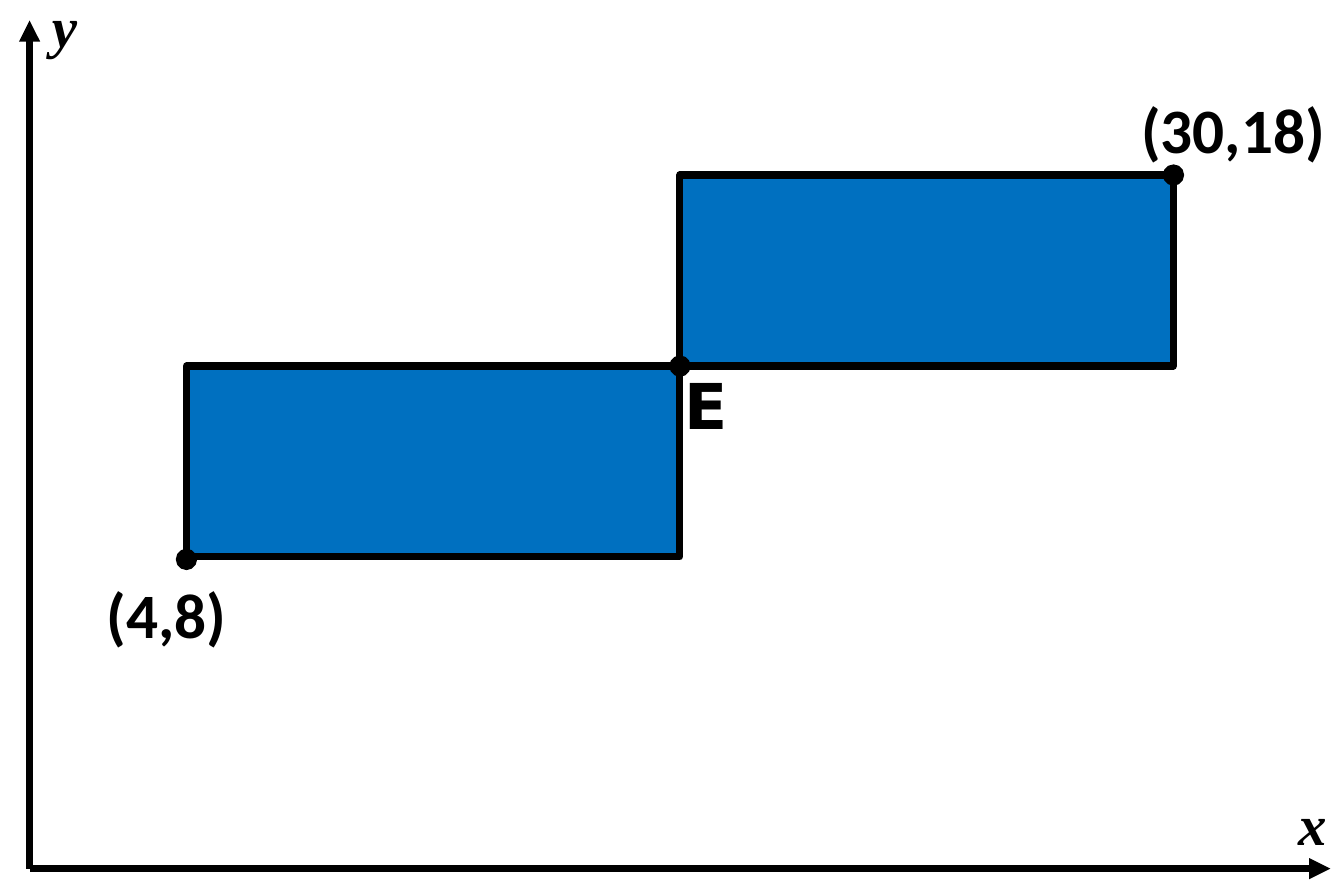
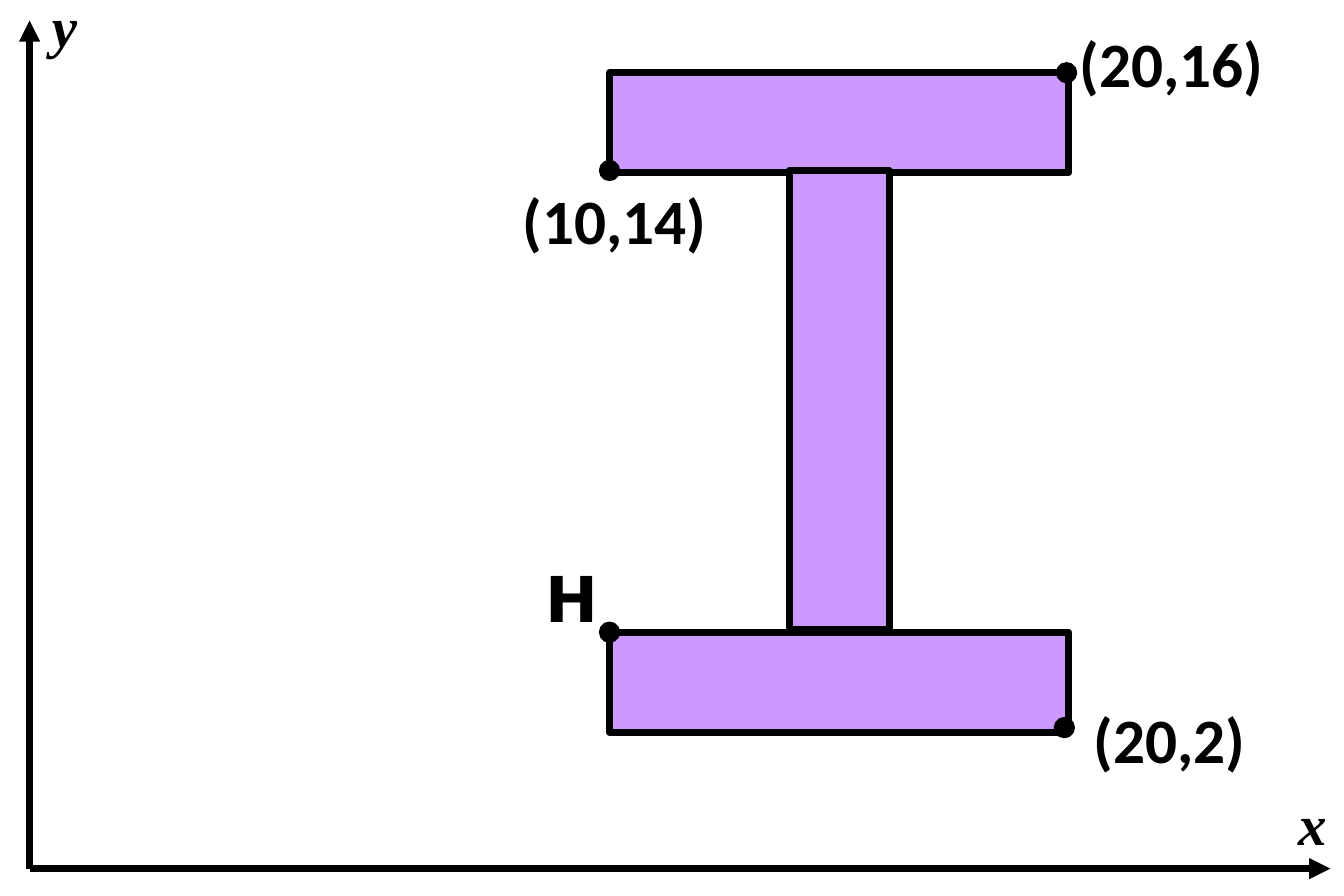
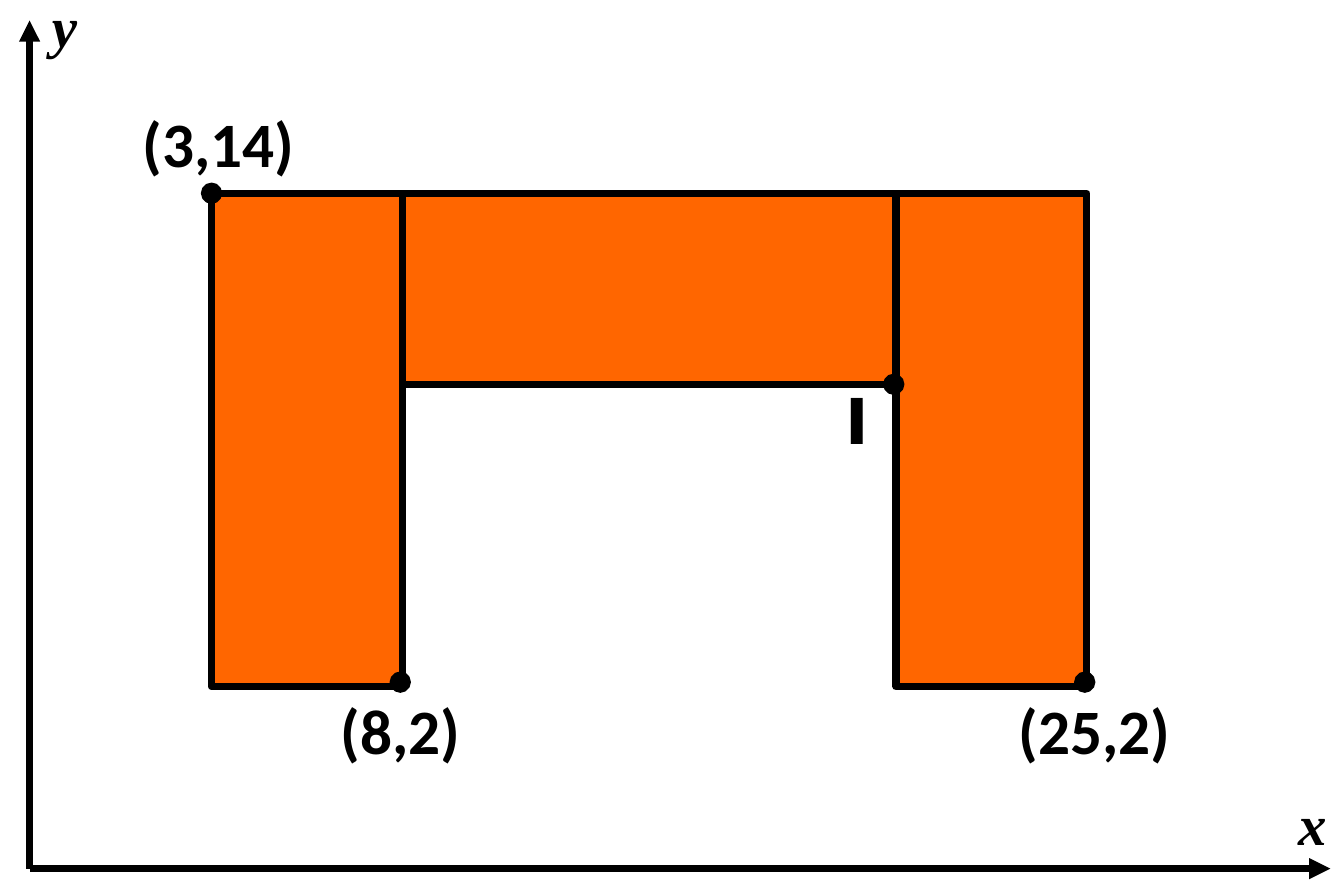
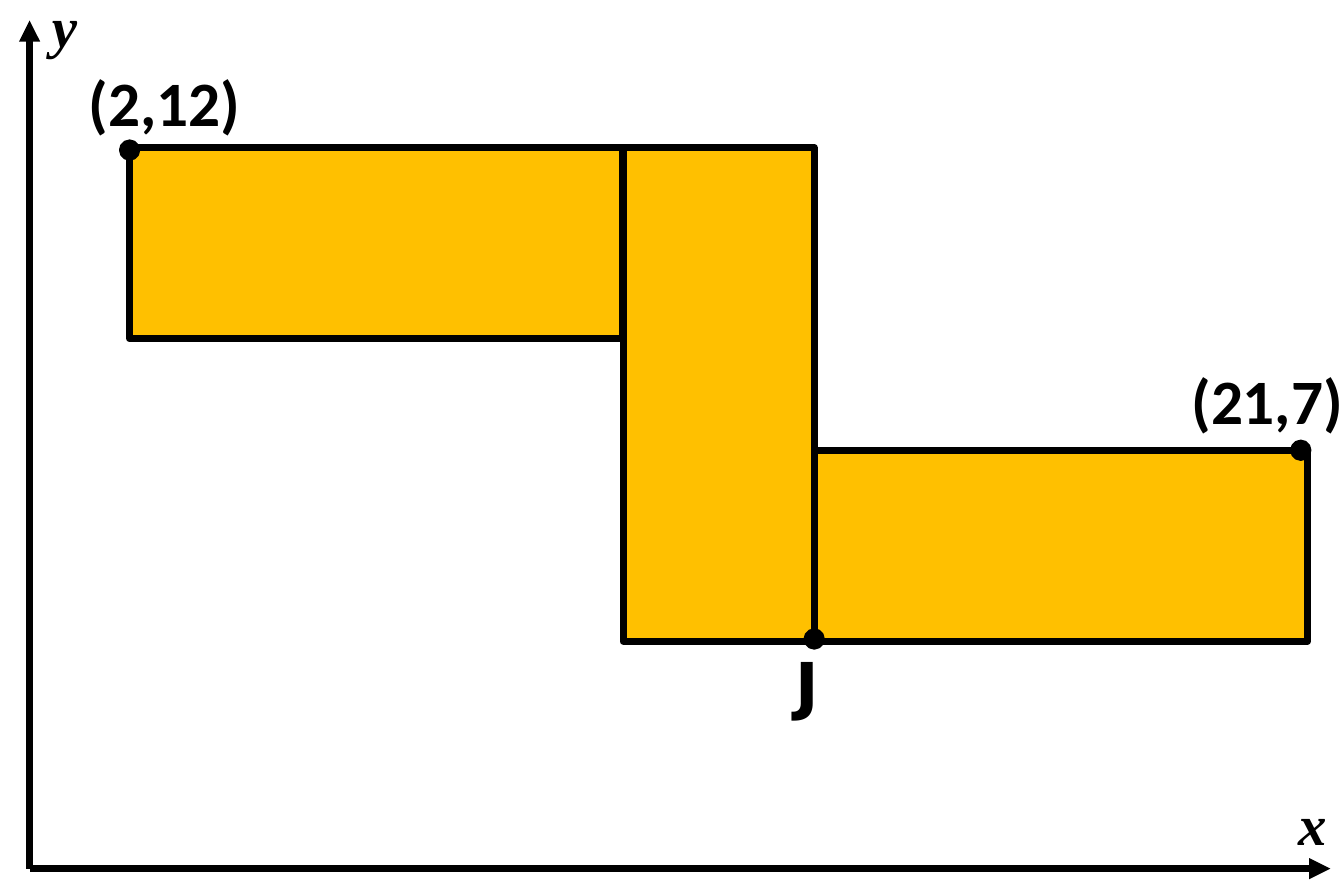
from dataclasses import dataclass

from lxml import etree
from pptx import Presentation
from pptx import util as u
from pptx.dml.color import RGBColor
from pptx.enum import shapes, text
from pptx.oxml.ns import qn

BLACK = RGBColor(0x00, 0x00, 0x00)
BLUE = RGBColor(0x00, 0x70, 0xC0)
LILAC = RGBColor(0xCC, 0x99, 0xFF)
ORANGE = RGBColor(0xFF, 0x66, 0x00)
AMBER = RGBColor(0xFF, 0xC0, 0x00)

SLIDE_WIDTH, SLIDE_HEIGHT = u.Inches(5.91), u.Inches(3.94)
COLUMNS, ROWS = 591, 394
OUTLINE = u.Pt(2.25)
DOT = 8
NAME_WIDTHS = {"E": 39, "H": 44, "I": 36, "J": 36}


@dataclass(frozen=True)
class Grid:
    """A region split into equal columns and rows."""
    left: int
    top: int
    width: int
    height: int

    def point(self, column, row):
        """Return the slide position of a grid point."""
        return (self.left + round(self.width * column / COLUMNS),
                self.top + round(self.height * row / ROWS))

    def area(self, column, row, columns, rows):
        """Return the slide box of a block of cells."""
        return (*self.point(column, row),
                round(self.width * columns / COLUMNS),
                round(self.height * rows / ROWS))


@dataclass(frozen=True)
class Vertex:
    """A marked corner, with its label and the label's top left cell."""
    column: int
    row: int
    label: str
    label_column: int
    label_row: int


@dataclass(frozen=True)
class Figure:
    """Equal bars, each lying flat or upright, with marked corners."""
    fill: RGBColor
    length: int
    thickness: int
    flat: tuple
    upright: tuple
    vertices: tuple


FIGURES = (
    Figure(BLUE, 217, 84, ((82, 161), (299, 77)), (), (
        Vertex(82, 246, "(4,8)", 37, 248),
        Vertex(299, 161, "E", 291, 156),
        Vertex(516, 77, "(30,18)", 492, 35))),
    Figure(LILAC, 202, 44, ((268, 32), (268, 278)), ((347, 75),), (
        Vertex(268, 278, "H", 230, 241),
        Vertex(468, 320, "(20,2)", 471, 303),
        Vertex(469, 32, "(20,16)", 465, 6),
        Vertex(268, 75, "(10,14)", 220, 75))),
    Figure(ORANGE, 217, 84, ((177, 85),), ((93, 85), (394, 85)), (
        Vertex(93, 85, "(3,14)", 53, 41),
        Vertex(393, 169, "I", 362, 163),
        Vertex(477, 300, "(25,2)", 438, 299),
        Vertex(176, 300, "(8,2)", 140, 299))),
    Figure(AMBER, 217, 84, ((57, 65), (358, 198)), ((274, 65),), (
        Vertex(57, 66, "(2,12)", 29, 23),
        Vertex(358, 281, "J", 340, 279),
        Vertex(572, 198, "(21,7)", 514, 154))),
)


def add_label(slide, area, wording, font_name, size, italic=None):
    """Add a bold black one-line label."""
    label = slide.shapes.add_textbox(*area)
    frame = label.text_frame
    frame.word_wrap = False
    frame.auto_size = text.MSO_AUTO_SIZE.SHAPE_TO_FIT_TEXT
    paragraph = frame.paragraphs[0]
    paragraph.text = wording
    font = paragraph.font
    font.name, font.size = font_name, u.Pt(size)
    font.bold, font.italic = True, italic
    font.color.rgb = BLACK


def add_solid(slide, preset, area, fill, line_width):
    """Add a filled preset with a black outline."""
    solid = slide.shapes.add_shape(preset, *area)
    solid.shadow.inherit = False
    solid.fill.solid()
    solid.fill.fore_color.rgb = fill
    solid.line.color.rgb = BLACK
    solid.line.width = line_width


def draw_axes(slide, grid):
    """Draw the two arrows from the origin and their letters."""
    origin = 13, 382
    for tip, letter, area in (((13, 9), "y", (13, -9, 31, 40)),
                              ((585, 382), "x", (561, 342, 33, 40))):
        axis = slide.shapes.add_connector(
            shapes.MSO_CONNECTOR.STRAIGHT, *grid.point(*origin), *grid.point(*tip))
        axis.line.color.rgb = BLACK
        axis.line.width = OUTLINE
        etree.SubElement(axis.line._get_or_add_ln(), qn("a:tailEnd"), type="triangle")
        etree.SubElement(axis._element.spPr, qn("a:effectLst"))
        add_label(slide, grid.area(*area), letter, "Times New Roman", 18, italic=True)


def draw_bars(slide, grid, figure):
    """Draw the flat and upright bars of a figure."""
    size = figure.length, figure.thickness
    for corners, extent in ((figure.flat, size), (figure.upright, size[::-1])):
        for corner in corners:
            add_solid(slide, shapes.MSO_SHAPE.RECTANGLE,
                      grid.area(*corner, *extent), figure.fill, OUTLINE)


def draw_vertex(slide, grid, vertex):
    """Draw the dot of a vertex and its name or coordinates."""
    dot_area = grid.area(vertex.column - DOT / 2, vertex.row - DOT / 2, DOT, DOT)
    add_solid(slide, shapes.MSO_SHAPE.OVAL, dot_area, BLACK, u.Pt(1))
    named = vertex.label in NAME_WIDTHS
    width = NAME_WIDTHS[vertex.label] if named else 1 + 14.5 * len(vertex.label)
    add_label(slide, grid.area(vertex.label_column, vertex.label_row, width, 44),
              vertex.label, "DejaVu Sans" if named else "Calibri", 20)


def draw_figure(slide, grid, figure):
    """Draw a whole coordinate figure inside the grid."""
    draw_axes(slide, grid)
    draw_bars(slide, grid, figure)
    for vertex in figure.vertices:
        draw_vertex(slide, grid, vertex)


def main():
    """Build and save the presentation."""
    deck = Presentation()
    deck.slide_width, deck.slide_height = SLIDE_WIDTH, SLIDE_HEIGHT
    blank = deck.slide_layouts.get_by_name("Blank")
    grid = Grid(0, 0, SLIDE_WIDTH, SLIDE_HEIGHT)
    for figure in FIGURES:
        draw_figure(deck.slides.add_slide(blank), grid, figure)
    deck.save("out.pptx")


if __name__ == "__main__":
    main()
